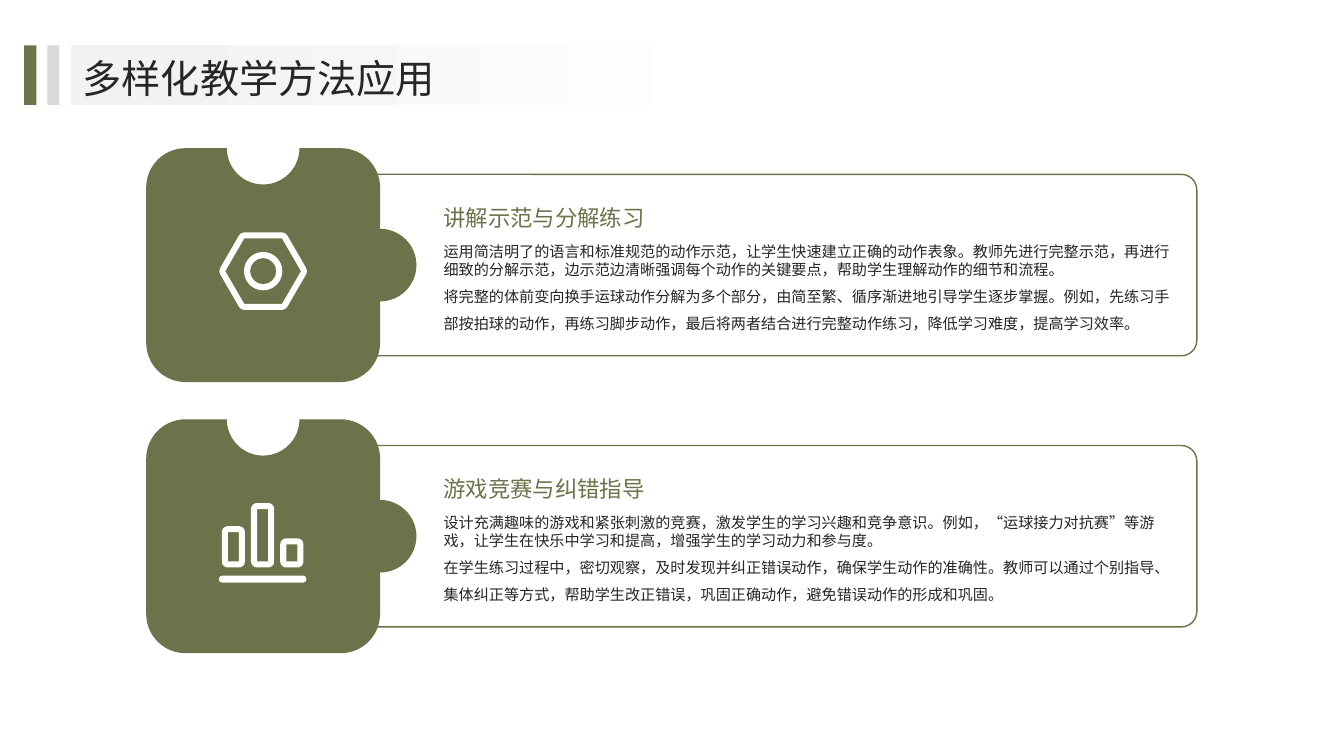
"""Build a slide on varied teaching methods with two puzzle-piece cards."""
import math
from dataclasses import dataclass
from typing import Any

import pptx
import pptx.dml.color
import pptx.enum.shapes
import pptx.enum.text
import pptx.oxml.ns
import pptx.util
from lxml import etree

Inches = pptx.util.Inches
RGBColor = pptx.dml.color.RGBColor
Preset = pptx.enum.shapes.MSO_SHAPE
Anchor = pptx.enum.text.MSO_ANCHOR
qn = pptx.oxml.ns.qn

OLIVE = RGBColor(0x6A, 0x73, 0x49)
INK = RGBColor(0x26, 0x26, 0x26)
WHITE = RGBColor(0xFF, 0xFF, 0xFF)
SILVER = RGBColor(0xD9, 0xD9, 0xD9)
MIST = RGBColor(0xF2, 0xF2, 0xF2)
FONT = "Noto Sans CJK SC"
CARD_STEP = 2.69
STROKE = 0.06

Point = tuple[float, float]


@dataclass
class Node:
    """A corner, or the end of a curve when it has handles."""
    point: Point
    handles: tuple[Point, ...] = ()


@dataclass
class Card:
    """A puzzle piece with its icon and text."""
    heading: str
    body: str
    icon: list[list[Node]]


def on_circle(x: float, y: float, radius: float, degrees: float) -> Point:
    angle = math.radians(degrees)
    return x + radius * math.cos(angle), y + radius * math.sin(angle)


def arc(x: float, y: float, radius: float, start: float, end: float) -> list[Node]:
    count = math.ceil(abs(end - start) / 90)
    step = (end - start) / count
    reach = 4 / 3 * math.tan(math.radians(step) / 4)
    far, lean = radius * math.hypot(1, reach), math.degrees(math.atan(reach))
    nodes = [Node(on_circle(x, y, radius, start))]
    for i in range(count):
        begin, finish = start + step * i, start + step * (i + 1)
        handles = on_circle(x, y, far, begin + lean), on_circle(x, y, far, finish - lean)
        nodes.append(Node(on_circle(x, y, radius, finish), handles))
    return nodes


def rounded_box(left: float, top: float, width: float, height: float, radius: float) -> list[Node]:
    near_x, far_x = left + radius, left + width - radius
    near_y, far_y = top + radius, top + height - radius
    corners = [(near_x, near_y), (far_x, near_y), (far_x, far_y), (near_x, far_y)]
    return [node for i, (x, y) in enumerate(corners)
            for node in arc(x, y, radius, 180 + 90 * i, 270 + 90 * i)]


def sharp_box(left: float, top: float, width: float, height: float) -> list[Node]:
    right, bottom = left + width, top + height
    return [Node(point) for point in [(left, top), (right, top), (right, bottom), (left, bottom)]]


def puzzle_piece() -> list[Node]:
    left, top, size, corner, knob = 1.45, 1.47, 2.32, 0.39, 0.36
    right, bottom, middle = left + size, top + size, size / 2
    return (arc(left + corner, top + corner, corner, 180, 270)
            + arc(left + middle, top, knob, 180, 0)
            + arc(right - corner, top + corner, corner, 270, 360)
            + arc(right, top + middle, knob, -90, 90)
            + arc(right - corner, bottom - corner, corner, 0, 90)
            + arc(left + corner, bottom - corner, corner, 90, 180))


def nut_icon() -> list[list[Node]]:
    x, y = 2.61, 2.69
    corners = [on_circle(x, y, 0.375, 60 * i) for i in range(6)]
    outer = [node for i, corner in enumerate(corners)
             for node in arc(*corner, STROKE, 60 * i - 30, 60 * i + 30)]
    rings = [arc(x, y, radius, 0, 360) for radius in (0.19, 0.13)]
    return [outer, [Node(corner) for corner in corners], *rings]


def chart_icon() -> list[list[Node]]:
    width, bottom = 0.23, 2.94
    contours = [rounded_box(2.17, 3.02, 0.87, 0.07, 0.035)]
    for i, top in enumerate([2.53, 2.3, 2.65]):
        left, height = 2.2 + 0.29 * i, bottom - top
        contours.append(rounded_box(left, top, width, height, STROKE))
        contours.append(sharp_box(left + STROKE, top + STROKE,
                                  width - 2 * STROKE, height - 2 * STROKE))
    return contours


def add_outline(page: Any, contours: list[list[Node]], shift: float, color: RGBColor) -> None:
    def place(point: Point) -> tuple[int, int]:
        return Inches(point[0]), Inches(point[1] + shift)

    builder = page.shapes.build_freeform(*place(contours[0][0].point))
    for i, contour in enumerate(contours):
        if i:
            builder.move_to(*place(contour[0].point))
        builder.add_line_segments([place(node.point) for node in contour[1:]], close=True)
    shape = builder.convert_to_shape()
    shape.shadow.inherit = False
    shape.fill.solid()
    shape.fill.fore_color.rgb = color
    shape.line.fill.background()
    segments = list(shape._element.iter(qn("a:moveTo"), qn("a:lnTo")))
    nodes = [node for contour in contours for node in contour]
    for segment, node in zip(segments, nodes):
        if node.handles:
            curve = etree.Element(qn("a:cubicBezTo"))
            for x, y in map(place, (*node.handles, node.point)):
                spot = etree.SubElement(curve, qn("a:pt"))
                spot.set("x", str(x - shape.left))
                spot.set("y", str(y - shape.top))
            segment.getparent().replace(segment, curve)


def add_box(page: Any, left: float, top: float, width: float, height: float,
            color: RGBColor, preset: Any = Preset.RECTANGLE) -> Any:
    box = page.shapes.add_shape(preset, Inches(left), Inches(top), Inches(width), Inches(height))
    box.shadow.inherit = False
    box.fill.solid()
    box.fill.fore_color.rgb = color
    box.line.fill.background()
    return box


def add_text(page: Any, text: str, *, left: float, top: float, width: float, height: float,
             size: float, color: RGBColor, spacing: float = 1.5, anchor: Any = Anchor.TOP) -> None:
    box = page.shapes.add_textbox(Inches(left), Inches(top), Inches(width), Inches(height))
    frame = box.text_frame
    frame.word_wrap = True
    frame.vertical_anchor = anchor
    frame.margin_left = frame.margin_top = frame.margin_right = frame.margin_bottom = 0
    para = frame.paragraphs[0]
    para.line_spacing = spacing
    span = para.add_run()
    span.text = text
    span.font.size = pptx.util.Pt(size)
    span.font.name = FONT
    span.font.color.rgb = color
    east = etree.SubElement(span.font._element, qn("a:ea"))
    east.set("typeface", FONT)


def add_card(page: Any, card: Card, shift: float) -> None:
    panel = add_box(page, 3.38, 1.73 + shift, 8.49, 1.8, WHITE, Preset.ROUNDED_RECTANGLE)
    panel.adjustments[0] = 0.085
    panel.line.color.rgb = OLIVE
    panel.line.width = pptx.util.Pt(1)
    add_outline(page, [puzzle_piece()], shift, OLIVE)
    add_outline(page, card.icon, shift, WHITE)
    add_text(page, card.body, left=4.4, top=2.4 + shift, width=7.2, height=1.06,
             size=10.8, color=INK)
    add_text(page, card.heading, left=4.4, top=1.89 + shift, width=7.2, height=0.46,
             size=16, color=OLIVE)


def add_title(page: Any, title: str) -> None:
    band = add_box(page, 0.7, 0.45, 7.09, 0.59, MIST)
    band.fill.gradient()
    band.fill.gradient_angle = 0
    for stop, position, color in zip(band.fill.gradient_stops, [0.1, 0.93], [MIST, WHITE]):
        stop.position = position
        stop.color.rgb = color
    add_text(page, title, left=0.82, top=0.49, width=11.78, height=0.51,
             size=28, color=INK, spacing=1.1, anchor=Anchor.MIDDLE)
    for left, color in [(0.24, OLIVE), (0.47, SILVER)]:
        add_box(page, left, 0.45, 0.12, 0.59, color)


CARDS = [
    Card("讲解示范与分解练习", "运用简洁明了的语言和标准规范的动作示范，让学生快速建立正确的动作表象。教师先进行完整示范，再进行细致的分解示范，边示范边清晰强调每个动作的关键要点，帮助学生理解动作的细节和流程。\n将完整的体前变向换手运球动作分解为多个部分，由简至繁、循序渐进地引导学生逐步掌握。例如，先练习手部按拍球的动作，再练习脚步动作，最后将两者结合进行完整动作练习，降低学习难度，提高学习效率。", nut_icon()),
    Card("游戏竞赛与纠错指导", "设计充满趣味的游戏和紧张刺激的竞赛，激发学生的学习兴趣和竞争意识。例如，“运球接力对抗赛”等游戏，让学生在快乐中学习和提高，增强学生的学习动力和参与度。\n在学生练习过程中，密切观察，及时发现并纠正错误动作，确保学生动作的准确性。教师可以通过个别指导、集体纠正等方式，帮助学生改正错误，巩固正确动作，避免错误动作的形成和巩固。", chart_icon()),
]

deck = pptx.Presentation()
deck.slide_width, deck.slide_height = Inches(13.33), Inches(7.5)
slide = deck.slides.add_slide(deck.slide_layouts[6])
for index, entry in enumerate(CARDS):
    add_card(slide, entry, CARD_STEP * index)
add_title(slide, "多样化教学方法应用")
deck.save("out.pptx")
